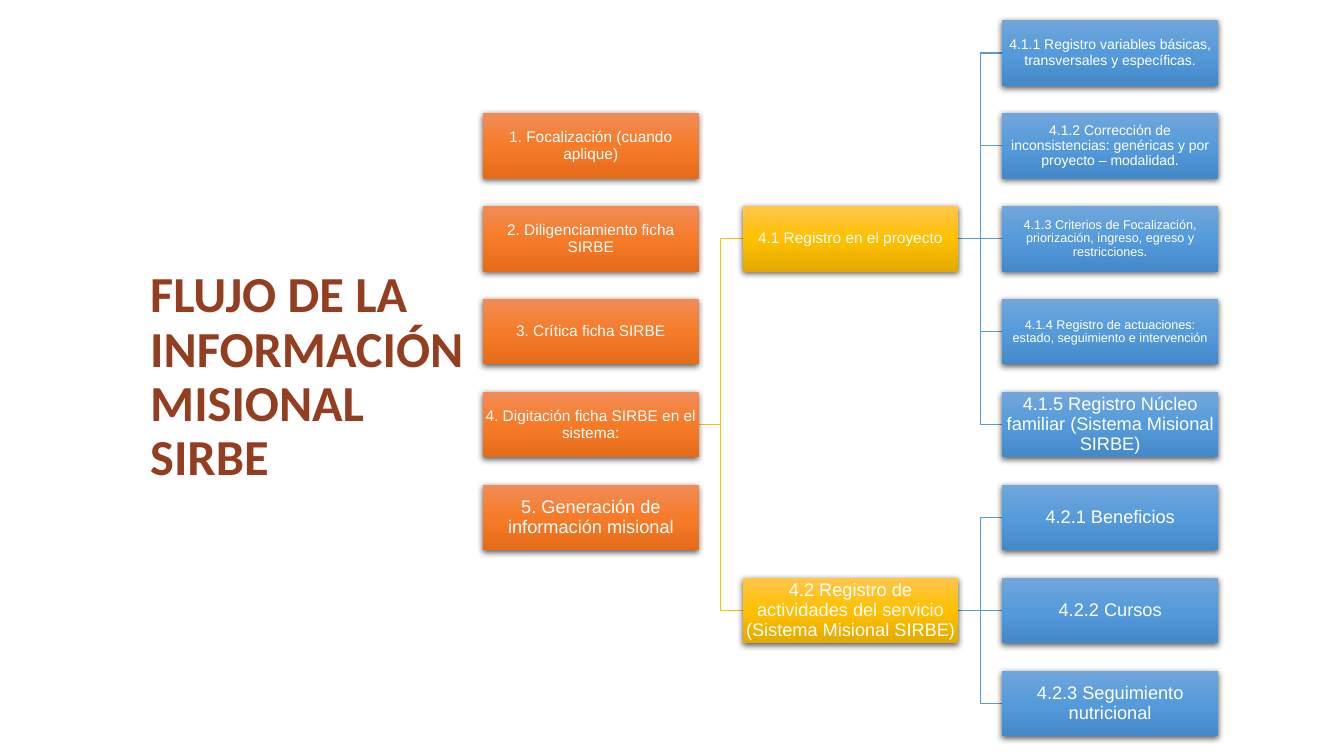
from lxml.etree import SubElement
from pptx import Presentation
from pptx.dml.color import RGBColor
from pptx.enum.shapes import MSO_CONNECTOR, MSO_SHAPE
from pptx.enum.text import MSO_ANCHOR, MSO_AUTO_SIZE, PP_ALIGN
from pptx.oxml.ns import qn
from pptx.util import Inches, Pt

COLORS = {
    "title": "933E20",
    "text": "FFFFFF",
    "shadow": "000000",
    "branch": "FFC000",
    "leaf": "5B9BD5",
}
GRADIENTS = [
    ("F18C57", "F67B28", "E56C19"),
    ("FFC64B", "FFC000", "E3AB00"),
    ("71A6DB", "559BDB", "448ACA"),
]
LEFT, TOP = 4.79, 0.2
BOX_WIDTH, BOX_HEIGHT = 2.14, 0.65
COLUMN_STEP, ROW_STEP = 2.575, 0.922

STEPS = [
    (0, 1, "1. Focalización (cuando aplique)", 11),
    (0, 2, "2. Diligenciamiento ficha SIRBE", 11),
    (0, 3, "3. Crítica ficha SIRBE", 11),
    (0, 4, "4. Digitación ficha SIRBE en el sistema:", 11),
    (0, 5, "5. Generación de información misional", 13),
    (1, 2, "4.1 Registro en el proyecto", 11),
    (1, 6, "4.2 Registro de actividades del servicio (Sistema Misional SIRBE)", 13),
    (2, 0, "4.1.1 Registro variables básicas, transversales y específicas.", 10),
    (2, 1, "4.1.2 Corrección de inconsistencias: genéricas y por proyecto – modalidad.", 10),
    (2, 2, "4.1.3 Criterios de Focalización, priorización, ingreso, egreso y restricciones.", 9),
    (2, 3, "4.1.4 Registro de actuaciones: estado, seguimiento e intervención", 9),
    (2, 4, "4.1.5 Registro Núcleo familiar (Sistema Misional SIRBE)", 13),
    (2, 5, "4.2.1 Beneficios", 13),
    (2, 6, "4.2.2 Cursos", 13),
    (2, 7, "4.2.3 Seguimiento nutricional", 13),
]
BRANCHES = [
    (0, 4, (2, 6), "branch"),
    (1, 2, range(5), "leaf"),
    (1, 6, range(5, 8), "leaf"),
]


def write(frame, text, *, size, font, color, bold=False, align=PP_ALIGN.LEFT, inset=None):
    """Put one formatted paragraph in a text frame."""
    frame.word_wrap = True
    frame.auto_size = MSO_AUTO_SIZE.NONE
    frame.vertical_anchor = MSO_ANCHOR.MIDDLE
    if inset is not None:
        frame.margin_left = frame.margin_right = Inches(inset)
        frame.margin_top = frame.margin_bottom = Inches(inset)
    paragraph = frame.paragraphs[0]
    paragraph.alignment = align
    paragraph.line_spacing = 0.9
    run = paragraph.add_run()
    run.text = text
    run.font.size = Pt(size)
    run.font.name = font
    run.font.bold = bold
    run.font.color.rgb = RGBColor.from_string(COLORS[color])


class FlowSlide:
    """Draw the elements of the flow on one slide."""

    def __init__(self, slide):
        self.slide = slide

    def title(self, text):
        """Place and format the title placeholder."""
        heading = self.slide.shapes.title
        heading.left, heading.top = Inches(1.39), Inches(0.4)
        heading.width, heading.height = Inches(3.45), Inches(6.7)
        write(heading.text_frame, text, size=36, font="Calibri", color="title", bold=True)

    def step(self, level, row, text, size):
        """Draw a shaded box with its label."""
        box = self.slide.shapes.add_shape(
            MSO_SHAPE.RECTANGLE,
            Inches(LEFT + level * COLUMN_STEP), Inches(TOP + row * ROW_STEP),
            Inches(BOX_WIDTH), Inches(BOX_HEIGHT))
        box.line.fill.background()
        self.shade(box, GRADIENTS[level])
        self.drop_shadow(box)
        write(box.text_frame, text, size=size, font="Arial", color="text",
              align=PP_ALIGN.CENTER, inset=0.01)

    def shade(self, box, stops):
        """Fill a box with an even gradient from top to bottom."""
        box.fill.gradient()
        box.fill.gradient_angle = 270
        stop_list = box._element.spPr.find(".//" + qn("a:gsLst"))
        for old_stop in list(stop_list):
            stop_list.remove(old_stop)
        for index, color in enumerate(stops):
            stop = SubElement(stop_list, qn("a:gs"), pos=str(index * 50000))
            SubElement(stop, qn("a:srgbClr"), val=color)

    def drop_shadow(self, box):
        """Give a box a soft shadow below it."""
        box.shadow.inherit = False
        effects = box._element.spPr.find(qn("a:effectLst"))
        outer = SubElement(effects, qn("a:outerShdw"), blurRad=str(Pt(4.5)),
                           dist=str(Pt(1.5)), dir="5400000", algn="ctr", rotWithShape="0")
        color = SubElement(outer, qn("a:srgbClr"), val=COLORS["shadow"])
        SubElement(color, qn("a:alpha"), val="63000")

    def link(self, level, parent_row, child_row, color):
        """Join a box to one in the next column."""
        start_x = LEFT + level * COLUMN_STEP + BOX_WIDTH
        end_x = LEFT + (level + 1) * COLUMN_STEP
        middle_x = (start_x + end_x) / 2
        start_y, end_y = (TOP + row * ROW_STEP + BOX_HEIGHT / 2
                          for row in (parent_row, child_row))
        if parent_row == child_row:
            branch = self.slide.shapes.add_connector(
                MSO_CONNECTOR.STRAIGHT, Inches(start_x), Inches(start_y),
                Inches(end_x), Inches(end_y))
            SubElement(branch._element.spPr, qn("a:effectLst"))
        else:
            outline = self.slide.shapes.build_freeform(Inches(start_x), Inches(start_y))
            corners = [(middle_x, start_y), (middle_x, end_y), (end_x, end_y)]
            outline.add_line_segments([(Inches(x), Inches(y)) for x, y in corners], close=False)
            branch = outline.convert_to_shape()
            branch.fill.background()
            branch.shadow.inherit = False
        branch.line.color.rgb = RGBColor.from_string(COLORS[color])
        branch.line.width = Pt(1)


def main():
    """Build the slide and save it."""
    deck = Presentation()
    deck.slide_width, deck.slide_height = Inches(13.33), Inches(7.5)
    flow = FlowSlide(deck.slides.add_slide(deck.slide_layouts[5]))
    flow.title("FLUJO DE LA INFORMACIÓN MISIONAL SIRBE")
    for level, parent_row, child_rows, color in BRANCHES:
        for child_row in child_rows:
            flow.link(level, parent_row, child_row, color)
    for level, row, text, size in STEPS:
        flow.step(level, row, text, size)
    deck.save("out.pptx")


if __name__ == "__main__":
    main()
